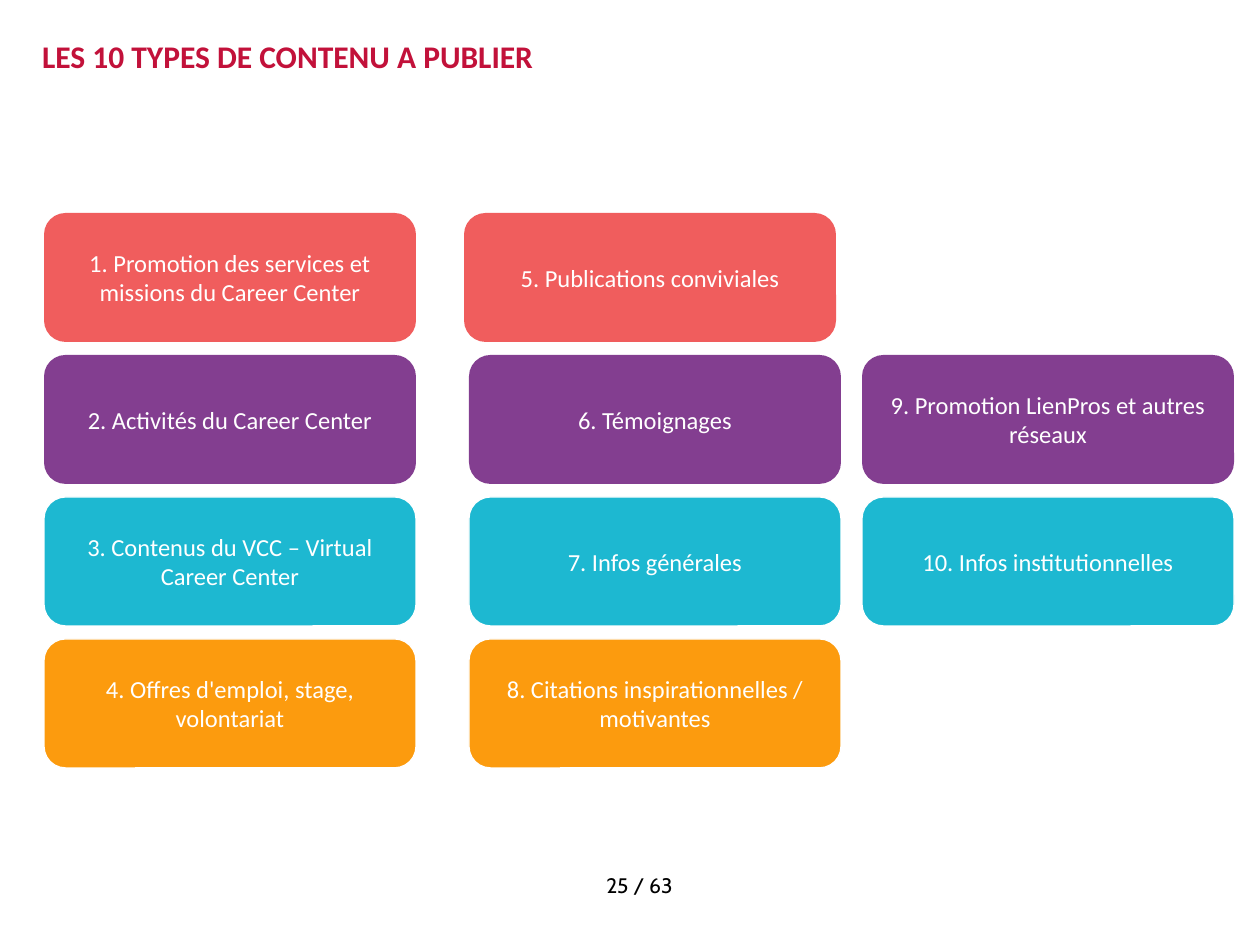
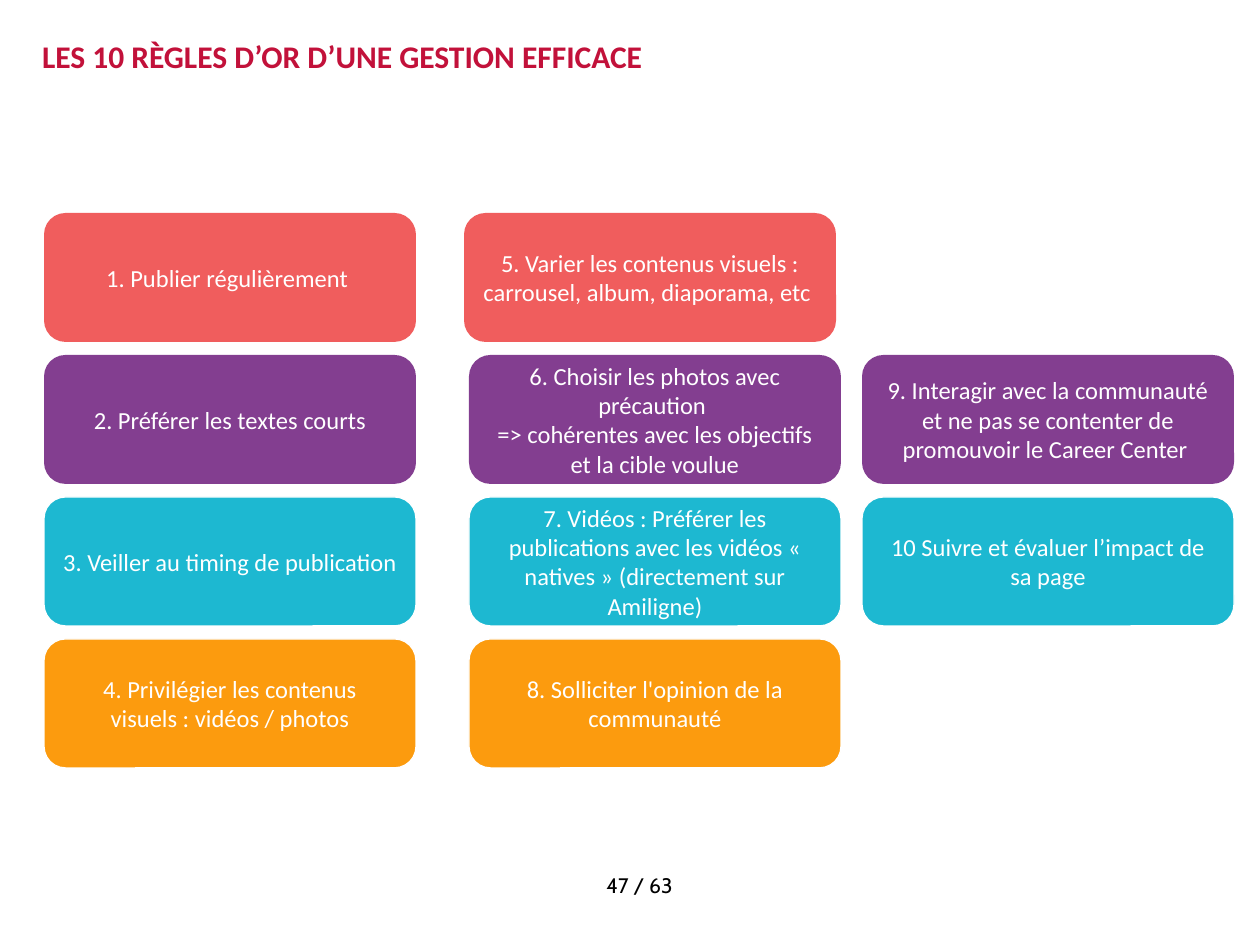
from pptx import Presentation
from pptx import util as u
from pptx.dml.color import RGBColor
from pptx.enum import shapes, text

PX = u.Inches(1) / 126
WHITE, BLACK, TITLE_RED = "FFFFFF", "000000", "C2113A"
ROW_COLOURS = ["F05D5D", "833E90", "1DB8D1", "FC9B0E"]
OUTLINED_ROWS = (2, 3)

GRID = (44, 213)
CARD_W, CARD_H = 372, 129
ROW_PITCH = 142
COLUMN_X = [0, 425, 818]
FIRST_ROWS = [0, 0, 1]
TOP_MIDDLE_SHIFT = -5

PAGES = [
    ("LES 10 TYPES DE CONTENU A PUBLIER", "25 / 63", [
        ["1. Promotion des services et missions du Career Center",
         "2. Activités du Career Center",
         "3. Contenus du VCC – Virtual Career Center",
         "4. Offres d'emploi, stage, volontariat"],
        ["5. Publications conviviales",
         "6. Témoignages",
         "7. Infos générales",
         "8. Citations inspirationnelles / motivantes"],
        ["9. Promotion LienPros et autres réseaux",
         "10. Infos institutionnelles"],
    ]),
    ("LES 10 RÈGLES D’OR D’UNE GESTION EFFICACE", "47 / 63", [
        ["1. Publier régulièrement ",
         "2. Préférer les textes courts",
         "3. Veiller au timing de publication",
         "4. Privilégier les contenus visuels : vidéos / photos"],
        ["5. Varier les contenus visuels : carrousel, album, diaporama, etc ",
         "6. Choisir les photos avec précaution \n"
         "=> cohérentes avec les objectifs et la cible voulue",
         "7. Vidéos : Préférer les publications avec les vidéos « natives » "
         "(directement sur Amiligne)",
         "8. Solliciter l'opinion de la communauté"],
        ["9. Interagir avec la communauté et ne pas se contenter de "
         "promouvoir le Career Center ",
         "10 Suivre et évaluer l’impact de sa page"],
    ]),
]


def rgb(colour):
    return RGBColor.from_string(colour)


def box(*lengths):
    return [u.Emu(round(n * PX)) for n in lengths]


def write(tf, content, size, colour, font="Calibri", bold=False,
          align=text.PP_ALIGN.CENTER):
    tf.text = content
    tf.word_wrap = True
    for p in tf.paragraphs:
        p.alignment = align
        for r in p.runs:
            r.font.name = font
            r.font.size = u.Pt(size)
            r.font.bold = bold
            r.font.color.rgb = rgb(colour)


def add_title(s, title):
    sp = s.shapes.title
    sp.left, sp.top, sp.width, sp.height = box(42, 37, 1176, 96)
    tf = sp.text_frame
    tf.margin_left = tf.margin_top = tf.margin_right = tf.margin_bottom = 0
    tf.vertical_anchor = text.MSO_ANCHOR.TOP
    tf.auto_size = text.MSO_AUTO_SIZE.NONE
    write(tf, title, 18, TITLE_RED, bold=True, align=text.PP_ALIGN.LEFT)


def add_card(s, x, y, row, content):
    sp = s.shapes.add_shape(shapes.MSO_SHAPE.ROUNDED_RECTANGLE,
                            *box(x, y, CARD_W, CARD_H))
    sp.shadow.inherit = False
    sp.fill.solid()
    sp.fill.fore_color.rgb = rgb(ROW_COLOURS[row])
    if row in OUTLINED_ROWS:
        sp.line.color.rgb = rgb(WHITE)
        sp.line.width = u.Pt(0.75)
    else:
        sp.line.fill.background()
    sp.text_frame.vertical_anchor = text.MSO_ANCHOR.MIDDLE
    write(sp.text_frame, content, 14, WHITE)


def add_card_grid(s, left, top, columns):
    for col, cards in enumerate(columns):
        for row, content in enumerate(cards, FIRST_ROWS[col]):
            shift = TOP_MIDDLE_SHIFT if (col, row) == (1, 0) else 0
            add_card(s, left + COLUMN_X[col] + shift, top + row * ROW_PITCH,
                     row, content)


def add_page_number(s, number):
    sp = s.shapes.add_textbox(*box(552, 866, 175, 39))
    write(sp.text_frame, number, 12, BLACK, font="Cabin")


def main():
    prs = Presentation()
    prs.slide_width, prs.slide_height = box(1260, 945)
    for title, number, columns in PAGES:
        s = prs.slides.add_slide(prs.slide_layouts[5])
        add_title(s, title)
        add_card_grid(s, *GRID, columns)
        add_page_number(s, number)
    prs.save("out.pptx")


if __name__ == "__main__":
    main()
